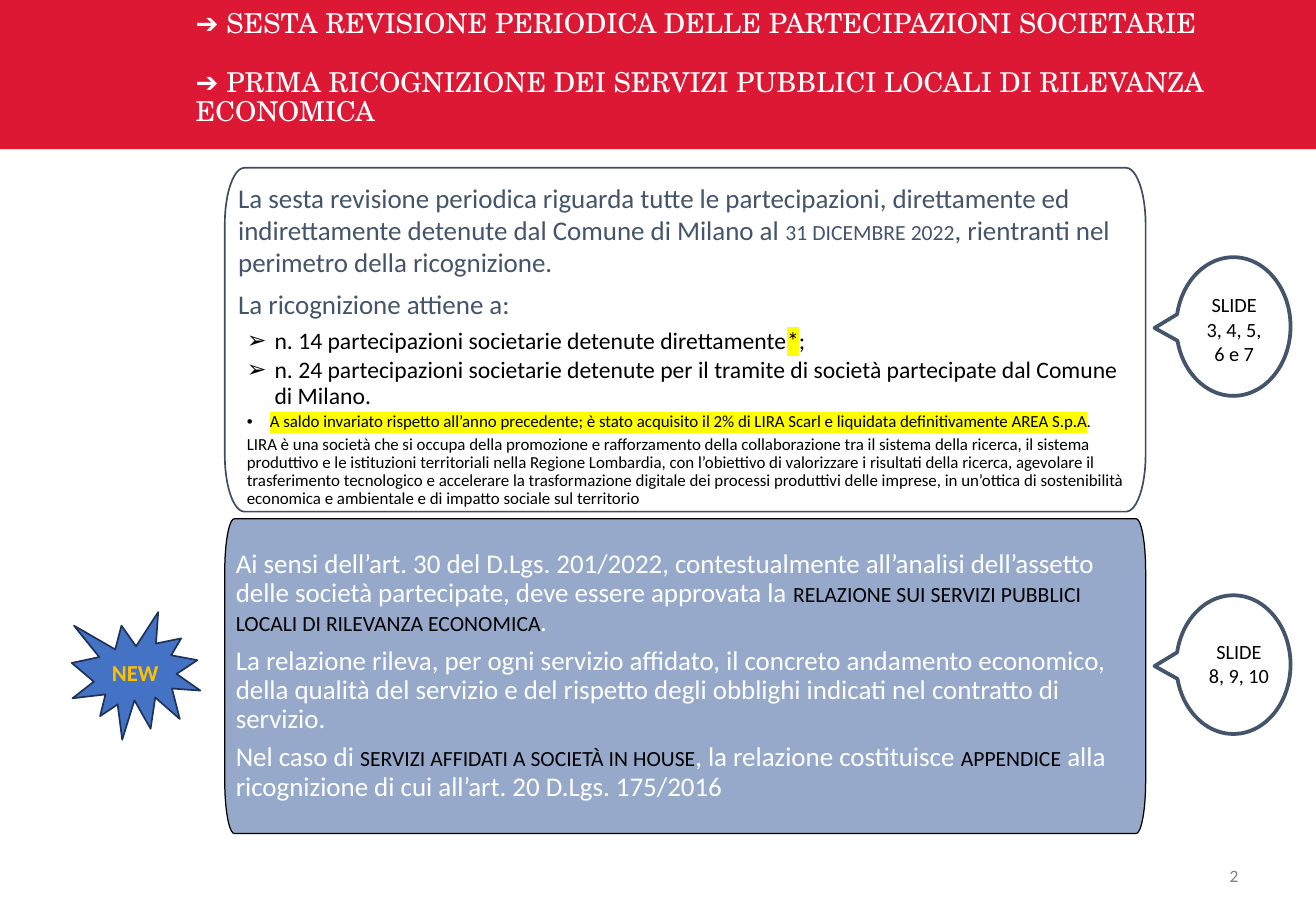
from math import cos, pi, sin

from lxml.etree import SubElement
from pptx import Presentation
from pptx.dml.color import RGBColor
from pptx.enum.shapes import MSO_SHAPE as Preset
from pptx.enum.text import MSO_ANCHOR as Anchor, MSO_AUTO_SIZE as AutoSize, PP_ALIGN as Align
from pptx.oxml import parse_xml
from pptx.oxml.ns import nsdecls, qn
from pptx.util import Cm, Pt

COLORS = {
    "red": "DD1835", "white": "FFFFFF", "black": "000000", "gray": "7F7F7F",
    "slate": "44546A", "border": "3E4C60", "navy": "2F5597", "blue": "4472C4",
    "dark": "1E3256", "gold": "FFC000", "yellow": "FFFF00",
}
SMALL = {"small": True}
SMALL_BLACK = {"small": True, "color": "black"}
MARKED = {"mark": "yellow"}


def rgb(name):
    return RGBColor.from_string(COLORS[name])


def add_span(para, text, size=16, color="black", font="Calibri",
             bold=False, italic=False, small=False, mark=None):
    span = para.add_run()
    span.text = text
    span.font.size = Pt(size)
    span.font.name = font
    span.font.bold = bold
    span.font.italic = italic
    span.font.color.rgb = rgb(color)
    properties = span.font._element
    if small:
        properties.set("cap", "small")
    if mark:
        properties.find(qn("a:solidFill")).addnext(parse_xml(
            f'<a:highlight {nsdecls("a")}><a:srgbClr val="{COLORS[mark]}"/></a:highlight>'))


def set_bullet(para, char, indent):
    """Give the paragraph a hanging bullet, or none when char is empty."""
    properties = para._p.get_or_add_pPr()
    properties.set("marL", str(Cm(indent)))
    properties.set("indent", str(-Cm(indent)))
    if char:
        SubElement(properties, qn("a:buChar")).set("char", char)
    else:
        SubElement(properties, qn("a:buNone"))


class SlideBuilder:
    def __init__(self, slide):
        self.slide = slide
        self.shapes = slide.shapes

    def fill_text(self, frame, paragraphs, anchor=Anchor.TOP, insets=(0.25, 0.13, 0.25, 0.13),
                  align=Align.LEFT, spacing=1.0, before=0, after=0, **style):
        """Fill a frame; a paragraph is a list of (text, format changes) spans."""
        frame.word_wrap = True
        frame.auto_size = AutoSize.NONE
        frame.vertical_anchor = anchor
        (frame.margin_left, frame.margin_top,
         frame.margin_right, frame.margin_bottom) = map(Cm, insets)
        for index, spans in enumerate(paragraphs):
            para = frame.add_paragraph() if index else frame.paragraphs[0]
            para.alignment = align
            para.line_spacing = spacing
            para.space_before = Pt(before if index else 0)
            para.space_after = Pt(after)
            for text, changes in spans:
                add_span(para, text, **{**style, **changes})

    def paint(self, shape, fill=None, line=None, width=1.0, alpha=None):
        shape.shadow.inherit = False
        if fill:
            shape.fill.solid()
            shape.fill.fore_color.rgb = rgb(fill)
            if alpha:
                color = shape.fill._xPr.find(qn("a:solidFill"))[0]
                SubElement(color, qn("a:alpha")).set("val", str(alpha * 1000))
        else:
            shape.fill.background()
        if line:
            shape.line.color.rgb = rgb(line)
            shape.line.width = Pt(width)
        else:
            shape.line.fill.background()
        return shape

    def preset(self, kind, place, **look):
        return self.paint(self.shapes.add_shape(kind, *map(Cm, place)), **look)

    def text(self, place, paragraphs, **style):
        box = self.shapes.add_textbox(*map(Cm, place))
        self.fill_text(box.text_frame, paragraphs, **style)

    def placeholder(self, shape, place, paragraphs, **style):
        shape.left, shape.top, shape.width, shape.height = map(Cm, place)
        self.fill_text(shape.text_frame, paragraphs, **style)

    def panel(self, place, corner, **look):
        """Draw a box whose corners are quarter ellipses of the given radii."""
        left, top, width, height = place
        rx, ry = corner
        right, bottom = left + width, top + height
        centers = [(right - rx, bottom - ry), (left + rx, bottom - ry),
                   (left + rx, top + ry), (right - rx, top + ry)]
        steps = 12
        points = []
        for quarter, (x, y) in enumerate(centers):
            for step in range(steps + 1):
                angle = (quarter + step / steps) * pi / 2
                points.append((Cm(x + rx * cos(angle)), Cm(y + ry * sin(angle))))
        builder = self.shapes.build_freeform(*points[0])
        builder.add_line_segments(points[1:], close=True)
        return self.paint(builder.convert_to_shape(), **look)

    def callout(self, top, label_place, lines):
        bubble = self.preset(Preset.OVAL_CALLOUT, (24.59, top, 2.39, 2.9),
                             line="slate", width=2.25)
        bubble.adjustments[0] = -0.69
        bubble.adjustments[1] = 0.01
        self.text(label_place, [[(line, {})] for line in lines], align=Align.CENTER, size=12)


def main():
    deck = Presentation()
    deck.slide_width, deck.slide_height = Cm(27.51), Cm(19.05)
    page = SlideBuilder(deck.slides.add_slide(deck.slide_layouts[1]))
    title, body = page.slide.placeholders

    band = page.preset(Preset.RECTANGLE, (0, 0, 27.51, 3.12), fill="red")
    title.element.addprevious(band.element)
    headings = ["SESTA REVISIONE PERIODICA DELLE PARTECIPAZIONI SOCIETARIE",
                "PRIMA RICOGNIZIONE DEI SERVIZI PUBBLICI LOCALI DI RILEVANZA ECONOMICA"]
    page.placeholder(title, (3.84, 0.69, 22.71, 2.11),
                     [[("➔ ", {"bold": True}), (heading, {})] for heading in headings],
                     anchor=Anchor.BOTTOM, spacing=0.9, before=17.3,
                     size=16.2, color="white", font="TeX Gyre Schola")
    page.text((19.71, 17.93, 6.43, 0.74), [[("2", {})]], anchor=Anchor.MIDDLE,
              align=Align.RIGHT, size=10.3, color="gray")

    review = page.panel((4.7, 3.51, 19.25, 7.19), (0.41, 1.19), fill="white", line="border")
    page.fill_text(review.text_frame, [
        [("La sesta revisione periodica riguarda tutte le partecipazioni, direttamente ed "
          "indirettamente detenute dal Comune di Milano al ", {}),
         ("31 dicembre 2022", SMALL),
         (", rientranti nel perimetro della ricognizione.", {})],
        [("La ricognizione attiene a:", {})],
    ], insets=[0.28] * 4, after=5.5, color="slate")

    review.element.addnext(body.element)
    note = {"size": 10}
    page.placeholder(body, (4.6, 6.83, 19.25, 3.86), [
        [("n. 14 partecipazioni societarie detenute direttamente", {}), ("*", MARKED), (";", {})],
        [("n. 24 partecipazioni societarie detenute per il tramite di società partecipate "
          "dal Comune di Milano.", {})],
        [("A saldo invariato rispetto all’anno precedente; è stato acquisito il 2% di LIRA Scarl "
          "e liquidata definitivamente AREA S.p.A", {**note, **MARKED}), (".", note)],
        [("LIRA è una società che si occupa della promozione e rafforzamento della "
          "collaborazione tra il sistema della ricerca, il sistema produttivo e le istituzioni "
          "territoriali nella Regione Lombardia, con l’obiettivo di valorizzare i risultati della "
          "ricerca, agevolare il trasferimento tecnologico e accelerare la trasformazione "
          "digitale dei processi produttivi delle imprese, in un’ottica di sostenibilità "
          "economica e ambientale e di impatto sociale sul territorio", note)],
    ], insets=(0.56, 0.05, 0.3, 0.05), spacing=0.9, after=2.3, size=14)
    bullets = [("➢", 0.58), ("➢", 0.58), ("•", 0.48), ("", 0)]
    for para, (char, indent) in zip(body.text_frame.paragraphs, bullets):
        set_bullet(para, char, indent)

    report = page.panel((4.7, 10.85, 19.25, 6.58), (0.2, 1.09), fill="navy", alpha=50,
                        line="black", width=0.75)
    page.fill_text(report.text_frame, [
        [("Ai sensi dell’art. 30 del D.Lgs. 201/2022, contestualmente all’analisi dell’assetto "
          "delle società partecipate, deve essere approvata la ", {}),
         ("relazione sui servizi pubblici locali di rilevanza economica", SMALL_BLACK),
         (".", {"italic": True})],
        [("La relazione rileva, per ogni servizio affidato, il concreto andamento economico, "
          "della qualità del servizio e del rispetto degli obblighi indicati nel contratto di "
          "servizio.", {})],
        [("Nel caso di ", {}), ("servizi affidati a società in house", SMALL_BLACK),
         (", la relazione costituisce ", {}), ("appendice", SMALL_BLACK),
         (" alla ricognizione di cui all’art. 20 D.Lgs. 175/2016", {})],
    ], anchor=Anchor.MIDDLE, insets=[0.23] * 4, spacing=0.9, after=5.5, color="white")

    star = page.preset(Preset.EXPLOSION1, (1.5, 12.8, 2.69, 2.67), fill="blue", line="dark")
    page.fill_text(star.text_frame, [[("NEW", {})]], anchor=Anchor.MIDDLE, insets=[0] * 4,
                   align=Align.CENTER, size=13.5, color="gold", bold=True)

    page.callout(5.38, (24.49, 5.99, 2.62, 1.8), ["SLIDE", "3, 4, 5,", "6 e 7"])
    page.callout(12.45, (24.59, 13.23, 2.62, 1.27), ["SLIDE", "8, 9, 10"])
    deck.save("out.pptx")


if __name__ == "__main__":
    main()
